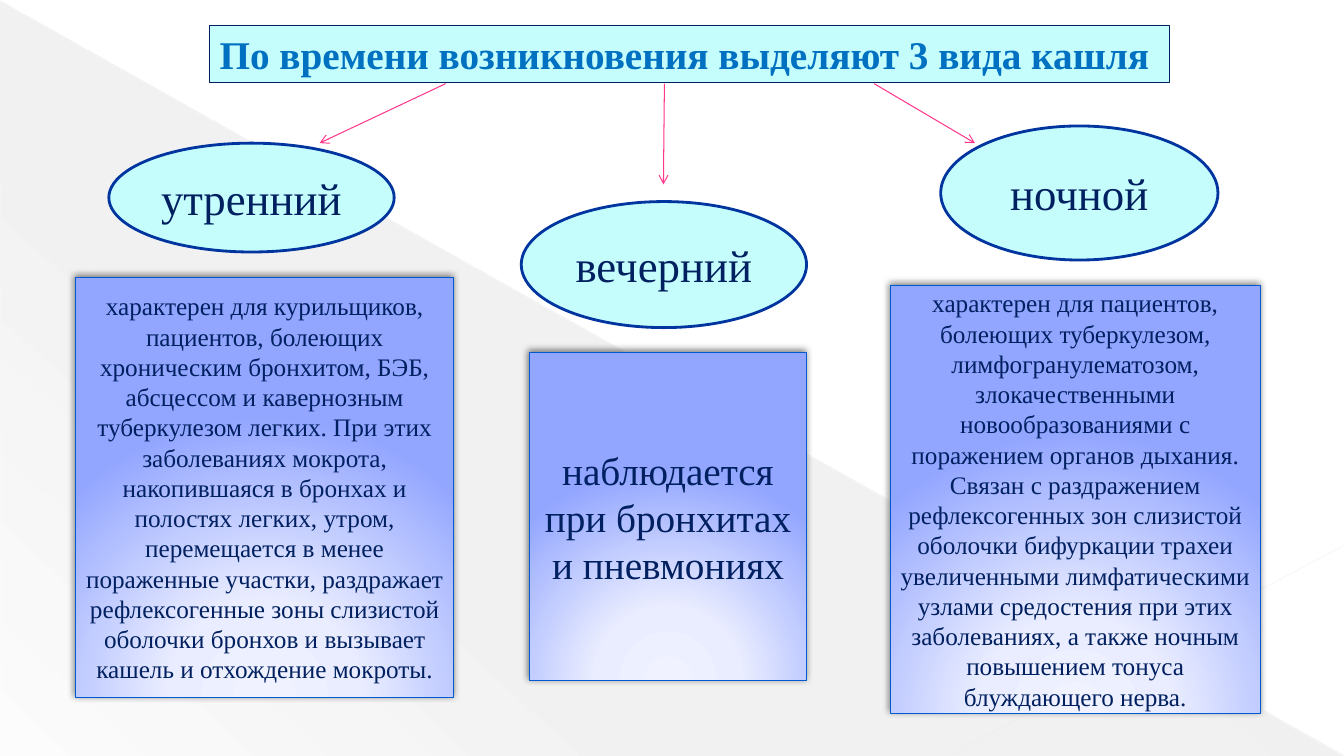
import pptx
import pptx.dml.color
import pptx.enum.shapes
import pptx.enum.text
import pptx.oxml
import pptx.oxml.ns
import pptx.util
from pptx.util import Inches

SHAPES = pptx.enum.shapes.MSO_SHAPE
ALIGN = pptx.enum.text.PP_ALIGN
ANCHOR = pptx.enum.text.MSO_ANCHOR
NAMESPACE = pptx.oxml.ns.nsdecls("a")
NAVY, CYAN, PINK = "002060", "C5FDFD", "FF388C"


def color(hex_value):
    return pptx.dml.color.RGBColor.from_string(hex_value)


def color_xml(hex_value, alpha=100):
    return f'<a:srgbClr val="{hex_value}"><a:alpha val="{alpha * 1000}"/></a:srgbClr>'


def gradient_xml(stops, direction):
    stops_xml = "".join(
        f'<a:gs pos="{position * 1000}">{color_xml(hex_value, alpha)}</a:gs>'
        for position, hex_value, alpha in stops)
    return f"<a:gradFill {NAMESPACE}><a:gsLst>{stops_xml}</a:gsLst>{direction}</a:gradFill>"


BACKDROP = gradient_xml(
    [(0, "666666", 10), (70, "666666", 8), (100, "666666", 1)],
    f'<a:lin ang="{133 * 60000}" scaled="0"/>')
GLOW = gradient_xml(
    [(0, "F0F2FF", 100), (34, "EAEDFF", 100), (100, "92A5FF", 100)],
    '<a:path path="circle"><a:fillToRect l="50000" t="155000" r="50000" b="-55000"/></a:path>')
SHADOW = (
    f'<a:outerShdw {NAMESPACE} blurRad="{5 * 12700}" dist="{2 * 12700}" '
    f'dir="{245 * 60000}" rotWithShape="0">{color_xml("000000", 50)}</a:outerShdw>')


class SlideBuilder:
    def __init__(self, slide, font_name):
        self.slide = slide
        self.font_name = font_name

    def shape(self, kind, box, fill, line=None, line_width=0.75):
        """Fill is a hex color or the XML of a gradient."""
        shape = self.slide.shapes.add_shape(kind, *map(Inches, box))
        shape.shadow.inherit = False
        shape.fill.solid()
        if fill.startswith("<"):
            properties = shape._element.spPr
            solid = properties.find(pptx.oxml.ns.qn("a:solidFill"))
            properties.replace(solid, pptx.oxml.parse_xml(fill))
        else:
            shape.fill.fore_color.rgb = color(fill)
        if line:
            shape.line.color.rgb = color(line)
            shape.line.width = pptx.util.Pt(line_width)
        else:
            shape.line.fill.background()
        return shape

    def text(self, shape, text, size, text_color=NAVY, bold=False,
             align=ALIGN.CENTER, anchor=ANCHOR.MIDDLE):
        frame = shape.text_frame
        frame.word_wrap = True
        frame.vertical_anchor = anchor
        paragraph = frame.paragraphs[0]
        paragraph.alignment = align
        run = paragraph.add_run()
        run.text = text
        formats = {"name": self.font_name, "size": pptx.util.Pt(size), "bold": bold}
        for name, value in formats.items():
            setattr(run.font, name, value)
        run.font.color.rgb = color(text_color)

    def title(self, text, box):
        shape = self.shape(SHAPES.RECTANGLE, box, CYAN, NAVY)
        self.text(shape, text, 28, "0070C0", True, ALIGN.LEFT, ANCHOR.TOP)

    def oval(self, text, box):
        self.text(self.shape(SHAPES.OVAL, box, CYAN, "00349E", 2), text, 32)

    def card(self, text, box, size):
        shape = self.shape(SHAPES.RECTANGLE, box, GLOW, "005BD3")
        effects = shape._element.spPr.find(pptx.oxml.ns.qn("a:effectLst"))
        effects.append(pptx.oxml.parse_xml(SHADOW))
        self.text(shape, text, size)

    def line(self, start, end, line_color, width, alpha=100, arrow=False):
        connector = self.slide.shapes.add_connector(
            pptx.enum.shapes.MSO_CONNECTOR.STRAIGHT, *map(Inches, start + end))
        connector.line.color.rgb = color(line_color)
        connector.line.width = pptx.util.Pt(width)
        properties = connector._element.spPr
        properties.append(pptx.oxml.parse_xml(f"<a:effectLst {NAMESPACE}/>"))
        outline = connector.line._get_or_add_ln()
        if alpha < 100:
            solid = outline.find(pptx.oxml.ns.qn("a:solidFill"))
            solid[0].append(pptx.oxml.parse_xml(f'<a:alpha {NAMESPACE} val="{alpha * 1000}"/>'))
        if arrow:
            outline.append(pptx.oxml.parse_xml(f'<a:tailEnd {NAMESPACE} type="arrow"/>'))


# Each kind of cough: name, oval box, arrow ends, description, card box, text size
COUGHS = [
    ("утренний", (1.08, 1.42, 2.83, 1.08), (4.42, 0.83), (3.17, 1.42),
     "характерен для курильщиков, пациентов, болеющих хроническим бронхитом, БЭБ, "
     "абсцессом и кавернозным туберкулезом легких. При этих заболеваниях мокрота, "
     "накопившаяся в бронхах и полостях легких, утром, перемещается в менее пораженные "
     "участки, раздражает рефлексогенные зоны слизистой оболочки бронхов и вызывает "
     "кашель и отхождение мокроты.",
     (0.75, 2.75, 3.75, 4.17), 18),
    ("вечерний", (5.17, 2, 2.83, 1.25), (6.59, 0.83), (6.58, 1.83),
     "наблюдается при бронхитах и пневмониях",
     (5.25, 3.5, 2.75, 3.25), 28),
    ("ночной", (9.33, 1.25, 2.75, 1.33), (8.67, 0.83), (9.67, 1.42),
     "характерен для пациентов, болеющих туберкулезом, лимфогранулематозом, "
     "злокачественными новообразованиями с поражением органов дыхания. Связан с "
     "раздражением рефлексогенных зон слизистой оболочки бифуркации трахеи увеличенными "
     "лимфатическими узлами средостения при этих заболеваниях, а также ночным повышением "
     "тонуса блуждающего нерва.",
     (8.83, 2.83, 3.67, 4.25), 18),
]


def main():
    presentation = pptx.Presentation()
    presentation.slide_width = Inches(13.33)
    presentation.slide_height = Inches(7.5)
    slide = presentation.slides.add_slide(presentation.slide_layouts[6])
    builder = SlideBuilder(slide, "Times New Roman")

    # Backdrop
    builder.shape(SHAPES.RIGHT_TRIANGLE, (0.01, 0.02, 13.31, 7.48), BACKDROP)
    builder.line((0, 0.01), (13.32, 7.49), "E8E8E8", 0.39, alpha=35)
    builder.line((13.33, 5.41), (9.43, 7.49), "EAEAEA", 0.47, alpha=45)

    # Title and the three kinds of cough
    builder.title("По времени возникновения выделяют 3 вида кашля", (2.08, 0.25, 9.52, 0.57))
    for name, oval_box, start, end, description, card_box, size in COUGHS:
        builder.line(start, end, PINK, 0.75, arrow=True)
        builder.oval(name, oval_box)
        builder.card(description, card_box, size)

    presentation.save("out.pptx")


if __name__ == "__main__":
    main()
